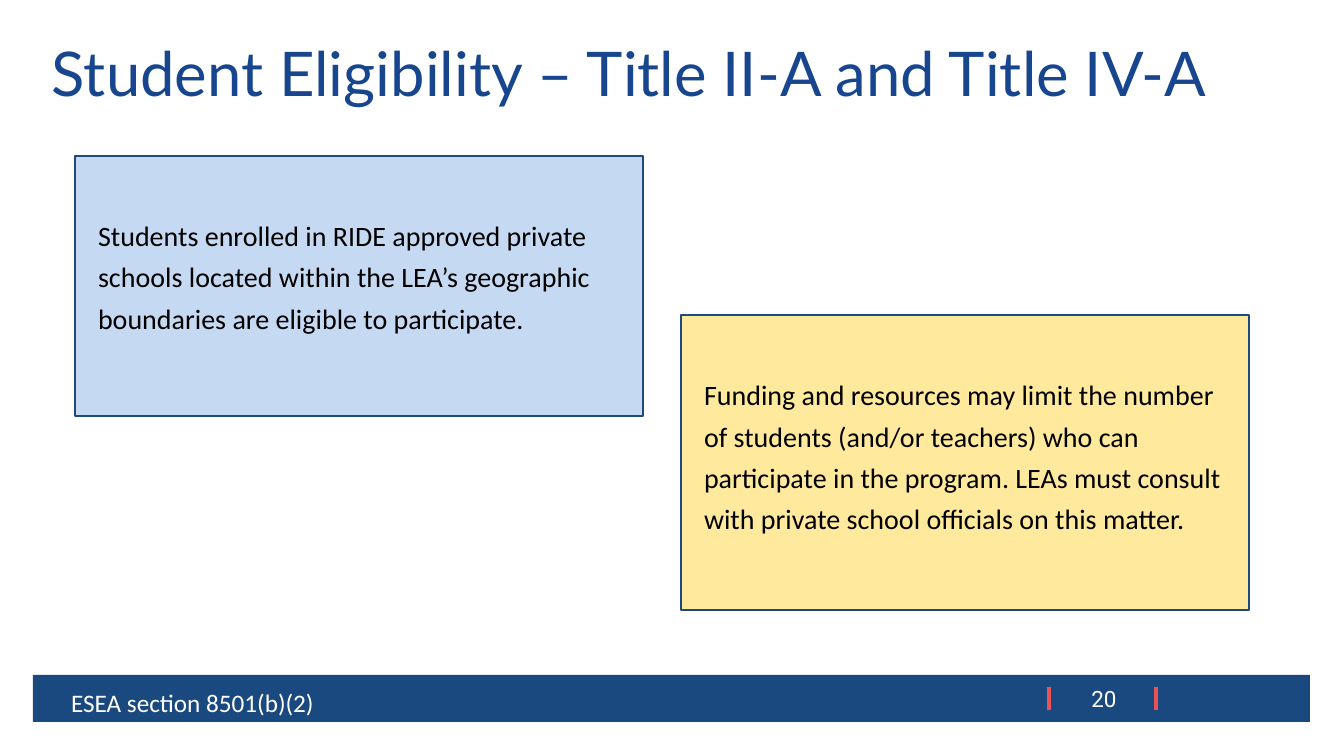
from lxml import etree
from pptx import Presentation
from pptx.dml.color import RGBColor
from pptx.enum.shapes import MSO_CONNECTOR, MSO_SHAPE
from pptx.enum.text import MSO_ANCHOR as ANCHOR, PP_ALIGN as ALIGN
from pptx.oxml.ns import qn
from pptx.util import Emu, Pt

# Boxes are left, top, width, height in px
TITLE = dict(text="Student Eligibility – Title II-A and Title IV-A", box=(42, 38, 1277, 78),
             font="Lato", size=44, color="17468E", spacing=0.9)
CARDS = [
    dict(text="Students enrolled in RIDE approved private schools located within "
              "the LEA’s geographic boundaries are eligible to participate.",
         box=(75, 156, 568, 260), fill="C6D9F2"),
    dict(text="Funding and resources may limit the number of students (and/or teachers) "
              "who can participate in the program. LEAs must consult with private school "
              "officials on this matter.",
         box=(681, 315, 568, 295), fill="FFE99D"),
]
CARD_TEXT = dict(font="Calibri", size=20, color="000000", spacing=1.23, left=23, top=55)
CARD_BORDER = "1E497F"
SOURCE = dict(text="ESEA section 8501(b)(2)", box=(23, 676, 672, 42),
              font="Calibri", size=18, color="FFFFFF", spacing=1.1, left=48, top=8)
PAGE = dict(text="20", box=(1072, 680, 64, 37), font="Roboto", size=16,
            color="FFFFFF", align=ALIGN.CENTER, anchor=ANCHOR.MIDDLE)
FOOTER_BAR = dict(box=(33, 675, 1277, 47), fill="1A497F")
PAGE_RULES = dict(xs=(1049, 1156), top=687, bottom=710, color="EC5153")


def px(length):
    return Emu(round(length * 914400 / 100.8))


def rgb(value):
    return RGBColor.from_string(value)


def write(shape, text, font, size, color, spacing=1.0, left=10, top=5,
          align=ALIGN.LEFT, anchor=ANCHOR.TOP):
    frame = shape.text_frame
    frame_format = dict(word_wrap=True, vertical_anchor=anchor, margin_left=px(left),
                        margin_top=px(top), margin_right=px(10), margin_bottom=px(5))
    for name, value in frame_format.items():
        setattr(frame, name, value)
    paragraph = frame.paragraphs[0]
    paragraph.alignment = align
    paragraph.line_spacing = spacing
    run = paragraph.add_run()
    run.text = text
    for name, value in dict(name=font, size=Pt(size)).items():
        setattr(run.font, name, value)
    run.font.color.rgb = rgb(color)


def add_label(slide, box, **text_format):
    write(slide.shapes.add_textbox(*map(px, box)), **text_format)


def add_panel(slide, box, fill, border=None):
    panel = slide.shapes.add_shape(MSO_SHAPE.RECTANGLE, *map(px, box))
    panel.shadow.inherit = False
    panel.fill.solid()
    panel.fill.fore_color.rgb = rgb(fill)
    if border:
        panel.line.color.rgb = rgb(border)
        panel.line.width = Pt(2)
    else:
        panel.line.fill.background()
    return panel


def add_page_rules(slide, xs, top, bottom, color):
    for x in xs:
        rule = slide.shapes.add_connector(MSO_CONNECTOR.STRAIGHT,
                                          px(x), px(top), px(x), px(bottom))
        rule.line.color.rgb = rgb(color)
        rule.line.width = Pt(2.25)
        etree.SubElement(rule._element.spPr, qn("a:effectLst"))


def main():
    deck = Presentation()
    deck.slide_width, deck.slide_height = px(1344), px(756)
    slide = deck.slides.add_slide(deck.slide_layouts[6])
    add_panel(slide, **FOOTER_BAR)
    add_page_rules(slide, **PAGE_RULES)
    add_label(slide, **TITLE)
    for card in CARDS:
        panel = add_panel(slide, card["box"], card["fill"], CARD_BORDER)
        write(panel, card["text"], **CARD_TEXT)
    for label in (SOURCE, PAGE):
        add_label(slide, **label)
    deck.save("out.pptx")


if __name__ == "__main__":
    main()
